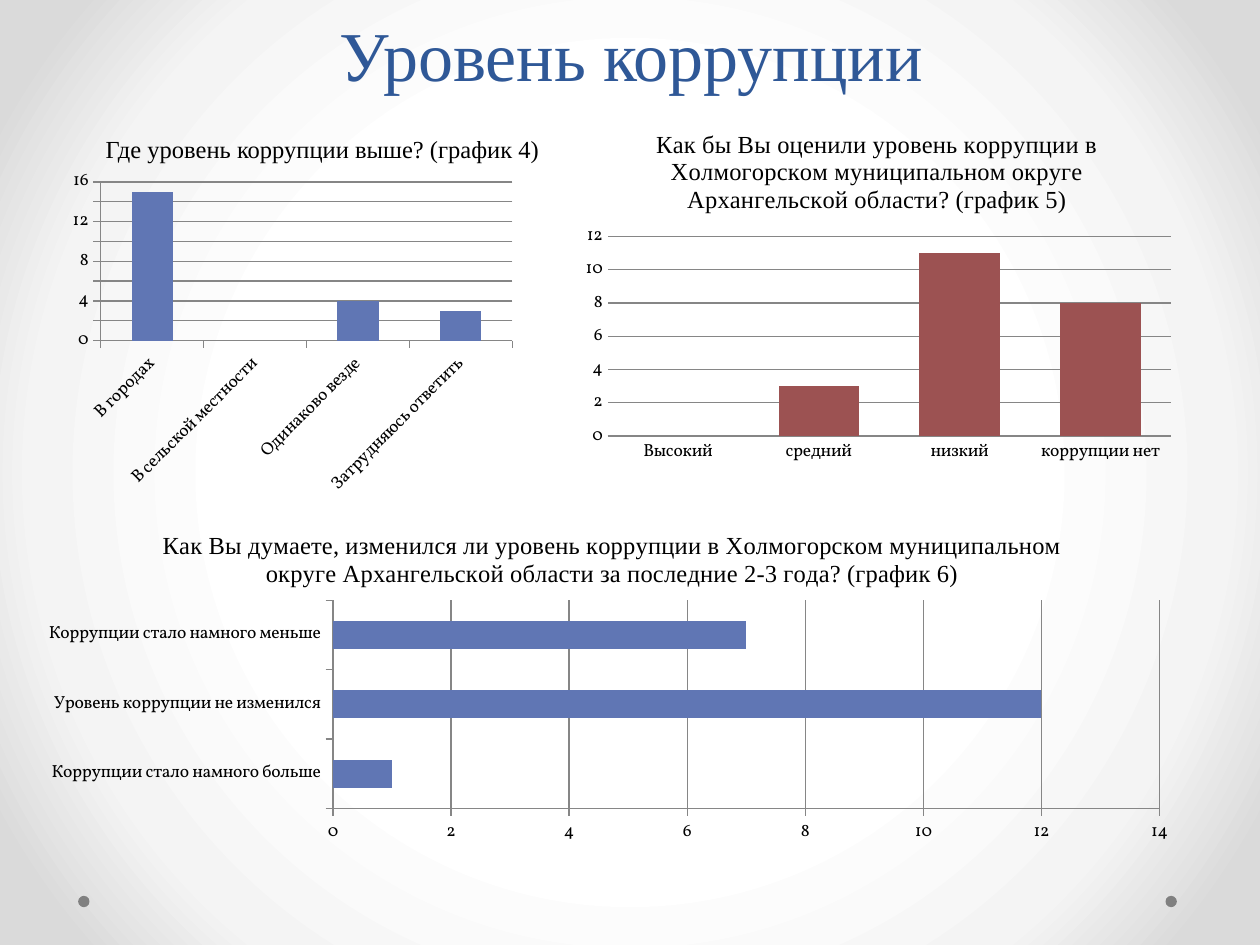
from dataclasses import dataclass

from lxml import etree
from pptx import Presentation
from pptx.chart.data import CategoryChartData
from pptx.dml.color import RGBColor
from pptx.enum.chart import XL_CHART_TYPE, XL_TICK_MARK
from pptx.enum.shapes import MSO_SHAPE
from pptx.enum.text import MSO_ANCHOR, PP_ALIGN
from pptx.oxml.ns import qn
from pptx.util import Inches, Pt

COLUMNS = XL_CHART_TYPE.COLUMN_CLUSTERED
BARS = XL_CHART_TYPE.BAR_CLUSTERED
TICK_OUT = XL_TICK_MARK.OUTSIDE
TICK_NONE = XL_TICK_MARK.NONE
OVAL = MSO_SHAPE.OVAL
BOTTOM = MSO_ANCHOR.BOTTOM
CENTER = PP_ALIGN.CENTER

WIDTH, HEIGHT = Inches(10), Inches(7.5)


@dataclass(frozen=True)
class Theme:
    """Colours, fonts and type sizes of the slide."""
    heading: str = "2F5897"
    ink: str = "000000"
    blue: str = "6076B4"
    red: str = "9C5252"
    grid: str = "868686"
    dot: str = "808080"
    backdrop: tuple = ((50, "FFFFFF"), (76, "F4F4F4"), (92, "DADADA"))
    serif: str = "Times New Roman"
    label_font: str = "Vollkorn"
    heading_size: int = 40
    caption_size: int = 14
    label_size: int = 10
    line_pitch: int = 58


THEME = Theme()


def share(left, top, width, height):
    """Turn percentages of the slide into a position and size."""
    return (int(WIDTH * left / 100), int(HEIGHT * top / 100),
            int(WIDTH * width / 100), int(HEIGHT * height / 100))


def style_font(font, name, size, colour):
    """Set the face, size and colour of regular text."""
    font.name, font.size, font.bold = name, Pt(size), False
    font.color.rgb = RGBColor.from_string(colour)


def paint_background(slide):
    """Fill the slide with a gradient that radiates from its centre."""
    fill = slide.background.fill
    fill.gradient()
    gradient = slide.background._cSld.find(".//" + qn("a:gradFill"))
    for child in list(gradient):
        gradient.remove(child)
    stops = etree.SubElement(gradient, qn("a:gsLst"))
    for position, colour in THEME.backdrop:
        stop = etree.SubElement(stops, qn("a:gs"), pos=str(position * 1000))
        etree.SubElement(stop, qn("a:srgbClr"), val=colour)
    path = etree.SubElement(gradient, qn("a:path"), path="circle")
    etree.SubElement(path, qn("a:fillToRect"), l="50000", t="50000", r="50000", b="50000")


def add_dot(slide, left):
    """Place a small decorative dot near the foot of the slide."""
    dot = slide.shapes.add_shape(OVAL, *share(left, 94.8, 0.9, 1.2))
    dot.shadow.inherit = False
    dot.fill.solid()
    dot.fill.fore_color.rgb = RGBColor.from_string(THEME.dot)
    dot.line.fill.background()


def add_heading(slide, area, wording, size, colour):
    """Add a centred line of text resting on the bottom of its area."""
    frame = slide.shapes.add_textbox(*share(*area)).text_frame
    frame.word_wrap = True
    frame.vertical_anchor = BOTTOM
    paragraph = frame.paragraphs[0]
    paragraph.alignment = CENTER
    paragraph.line_spacing = Pt(THEME.line_pitch)
    run = paragraph.add_run()
    run.text = wording
    style_font(run.font, THEME.serif, size, colour)


def place_plot(chart, x, y, w, h):
    """Fix the inner plot area as shares of the chart."""
    plot_area = chart._chartSpace.find(".//" + qn("c:plotArea"))
    for old in plot_area.findall(qn("c:layout")):
        plot_area.remove(old)
    layout = etree.Element(qn("c:layout"))
    plot_area.insert(0, layout)
    manual = etree.SubElement(layout, qn("c:manualLayout"))
    settings = {"layoutTarget": "inner", "xMode": "edge", "yMode": "edge",
                "x": x, "y": y, "w": w, "h": h}
    for tag, value in settings.items():
        etree.SubElement(manual, qn("c:" + tag), val=str(value))


def style_axes(chart, top, step, tick):
    """Set scale, ticks, lines and gridlines of both axes."""
    values = chart.value_axis
    values.minimum_scale, values.maximum_scale, values.major_unit = 0, top, step
    values.has_major_gridlines = True
    grey = RGBColor.from_string(THEME.grid)
    values.major_gridlines.format.line.color.rgb = grey
    for axis in (chart.category_axis, values):
        axis.major_tick_mark, axis.minor_tick_mark = tick, TICK_NONE
        axis.format.line.color.rgb = grey
    if tick == TICK_NONE:
        values.format.line.fill.background()


def add_survey_chart(slide, kind, area, plot_area, answers, colour, top,
                     title=None, tick=TICK_OUT, gap=150, overlap=0):
    """Add a single-series chart of survey answers and return it."""
    data = CategoryChartData()
    data.categories = list(answers)
    data.add_series("Series 1", list(answers.values()))
    chart = slide.shapes.add_chart(kind, *share(*area), data).chart
    chart.has_legend = False
    style_font(chart.font, THEME.label_font, THEME.label_size, THEME.ink)
    chart.has_title = title is not None
    if title:
        run = chart.chart_title.text_frame.paragraphs[0].add_run()
        run.text = title
        style_font(run.font, THEME.serif, THEME.caption_size, THEME.ink)
        chart.chart_title.include_in_layout = False
    plot = chart.plots[0]
    plot.vary_by_categories = False
    plot.gap_width, plot.overlap = gap, overlap
    fill = plot.series[0].format.fill
    fill.solid()
    fill.fore_color.rgb = RGBColor.from_string(colour)
    style_axes(chart, top, 2, tick)
    place_plot(chart, *plot_area)
    return chart


def slant_categories(chart):
    """Turn the category labels up by 45 degrees."""
    labels = chart.category_axis.tick_labels
    style_font(labels.font, THEME.label_font, THEME.label_size, THEME.ink)
    body = chart.category_axis._element.find(".//" + qn("a:bodyPr"))
    body.set("rot", "-2700000")


def main():
    """Build the slide on the level of corruption and save it."""
    deck = Presentation()
    deck.slide_width, deck.slide_height = WIDTH, HEIGHT
    slide = deck.slides.add_slide(deck.slide_layouts[6])
    paint_background(slide)
    for left in (92.5, 6.2):
        add_dot(slide, left)
    add_heading(slide, (5.1, 1.73, 90, 9.07), "Уровень коррупции",
                THEME.heading_size, THEME.heading)
    places = add_survey_chart(
        slide, COLUMNS, (5.1, 17.47, 36.3, 35.73), (0.08, 0.05, 0.9, 0.47),
        {"В городах": 15, "В сельской местности": None,
         "Одинаково везде": 4, "Затрудняюсь ответить": 3}, THEME.blue, 16)
    slant_categories(places)
    add_heading(slide, (5.9, 11.2, 39.4, 6.8), "Где уровень коррупции выше? (график 4)",
                THEME.caption_size, THEME.ink)
    add_survey_chart(
        slide, COLUMNS, (45.3, 11.6, 48.6, 38.4), (0.06, 0.35, 0.92, 0.55),
        {"Высокий": None, "средний": 3, "низкий": 11, "коррупции нет": 8},
        THEME.red, 12,
        title="Как бы Вы оценили уровень коррупции в Холмогорском муниципальном "
              "округе Архангельской области? (график 5)",
        tick=TICK_NONE, gap=75, overlap=-25)
    add_survey_chart(
        slide, BARS, (2.4, 54.13, 92.4, 36.13), (0.26, 0.26, 0.71, 0.61),
        {"Коррупции стало намного больше": 1, "Уровень коррупции не изменился": 12,
         "Коррупции стало намного меньше": 7}, THEME.blue, 14,
        title="Как Вы думаете, изменился ли уровень коррупции в Холмогорском муниципальном "
              "округе Архангельской области за последние 2-3 года? (график 6)")
    deck.save("out.pptx")


if __name__ == "__main__":
    main()
